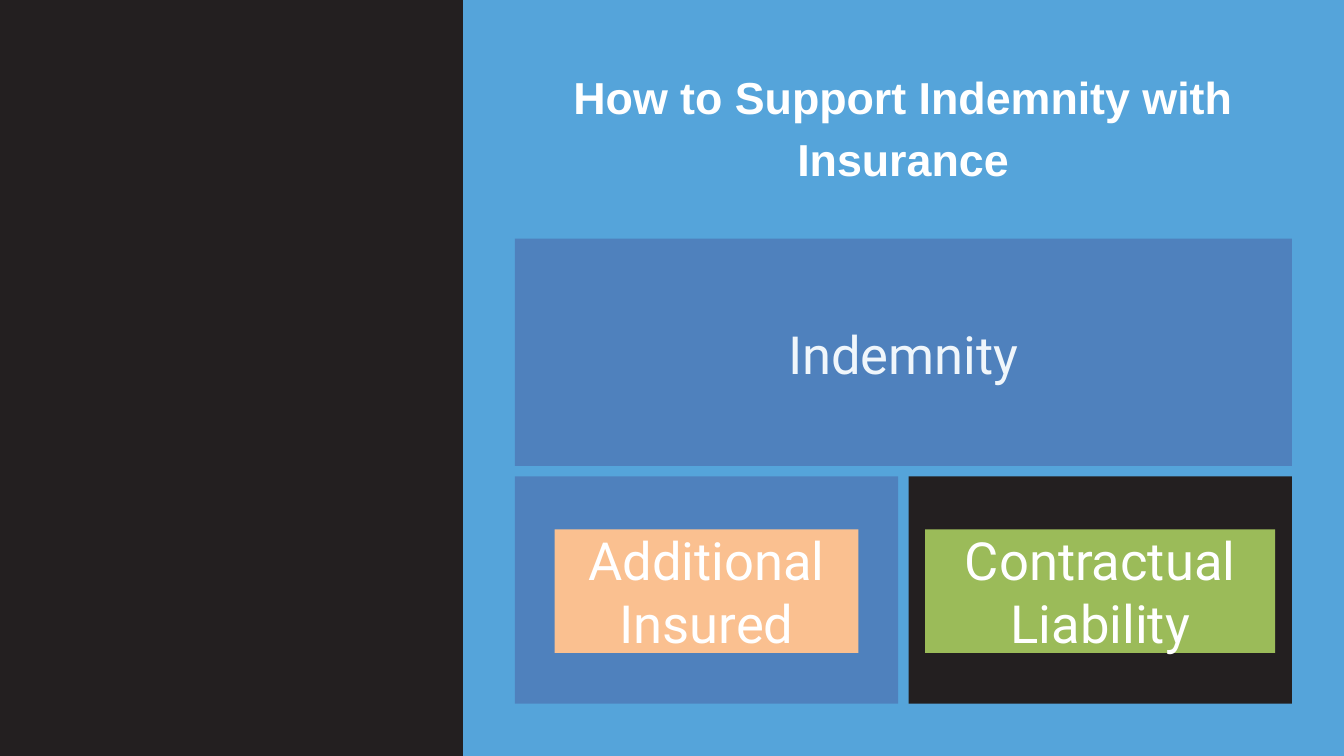
from dataclasses import dataclass

from pptx import Presentation
from pptx.dml.color import RGBColor
from pptx.enum.shapes import MSO_SHAPE
from pptx.enum.text import MSO_ANCHOR, PP_ALIGN
from pptx.util import Cm, Pt

RECTANGLE = MSO_SHAPE.RECTANGLE
TOP = MSO_ANCHOR.TOP
CENTER = PP_ALIGN.CENTER
TITLE_ONLY = 5


@dataclass(frozen=True)
class Theme:
    sky: str = "55A4DA"
    blue: str = "4F81BD"
    black: str = "231F20"
    peach: str = "FAC090"
    green: str = "9BBB59"
    white: str = "FFFFFF"
    pale: str = "F0F6FB"
    title_size: float = 48
    label_size: float = 56.3
    line_height: float = 66.6


theme = Theme()


def add_block(page, left, top, width, height, color):
    block = page.shapes.add_shape(RECTANGLE, Cm(left), Cm(top), Cm(width), Cm(height))
    block.shadow.inherit = False
    block.fill.solid()
    block.fill.fore_color.rgb = RGBColor.from_string(color)
    block.line.fill.background()
    return block


def write_text(box, text, *, size=theme.label_size, font="Roboto", color=theme.white, bold=False):
    frame = box.text_frame
    frame.word_wrap = True
    frame.vertical_anchor = TOP
    frame.margin_left = frame.margin_right = frame.margin_top = frame.margin_bottom = 0
    para = frame.paragraphs[0]
    para.alignment = CENTER
    para.line_spacing = Pt(theme.line_height)
    span = para.add_run()
    span.text = text
    span.font.size = Pt(size)
    span.font.name = font
    span.font.bold = bold
    span.font.color.rgb = RGBColor.from_string(color)


deck = Presentation()
deck.slide_width, deck.slide_height = Cm(50.8), Cm(28.58)
page = deck.slides.add_slide(deck.slide_layouts[TITLE_ONLY])
page.background.fill.solid()
page.background.fill.fore_color.rgb = RGBColor.from_string(theme.sky)

title = page.shapes.title
title.left, title.top, title.width, title.height = Cm(19.96), Cm(2.31), Cm(28.35), Cm(4.57)
write_text(title, "How to Support Indemnity with Insurance",
           size=theme.title_size, font="Arial", bold=True)

add_block(page, 0, 0, 17.5, 28.58, theme.black)

# One wide card above two half-width cards
grid_left, grid_top, grid_width = 19.46, 9.02, 29.37
card_height, gap = 8.59, 0.4
half_width = (grid_width - gap) / 2
lower_top = grid_top + card_height + gap

lower_cards = [
    ("Additional Insured", theme.blue, theme.peach, 11.48),
    ("Contractual Liability", theme.black, theme.green, 13.23),
]
for column, (text, card_color, label_color, label_width) in enumerate(lower_cards):
    left = grid_left + column * (half_width + gap)
    add_block(page, left, lower_top, half_width, card_height, card_color)
    label_left = left + (half_width - label_width) / 2
    label = add_block(page, label_left, lower_top + 2, label_width, 4.67, label_color)
    write_text(label, text)

add_block(page, grid_left, grid_top, grid_width, card_height, theme.blue)
label_width = 11.3
label_left = grid_left + (grid_width - label_width) / 2
heading = page.shapes.add_textbox(Cm(label_left), Cm(12.19), Cm(label_width), Cm(2.31))
write_text(heading, "Indemnity", color=theme.pale)

deck.save("out.pptx")
